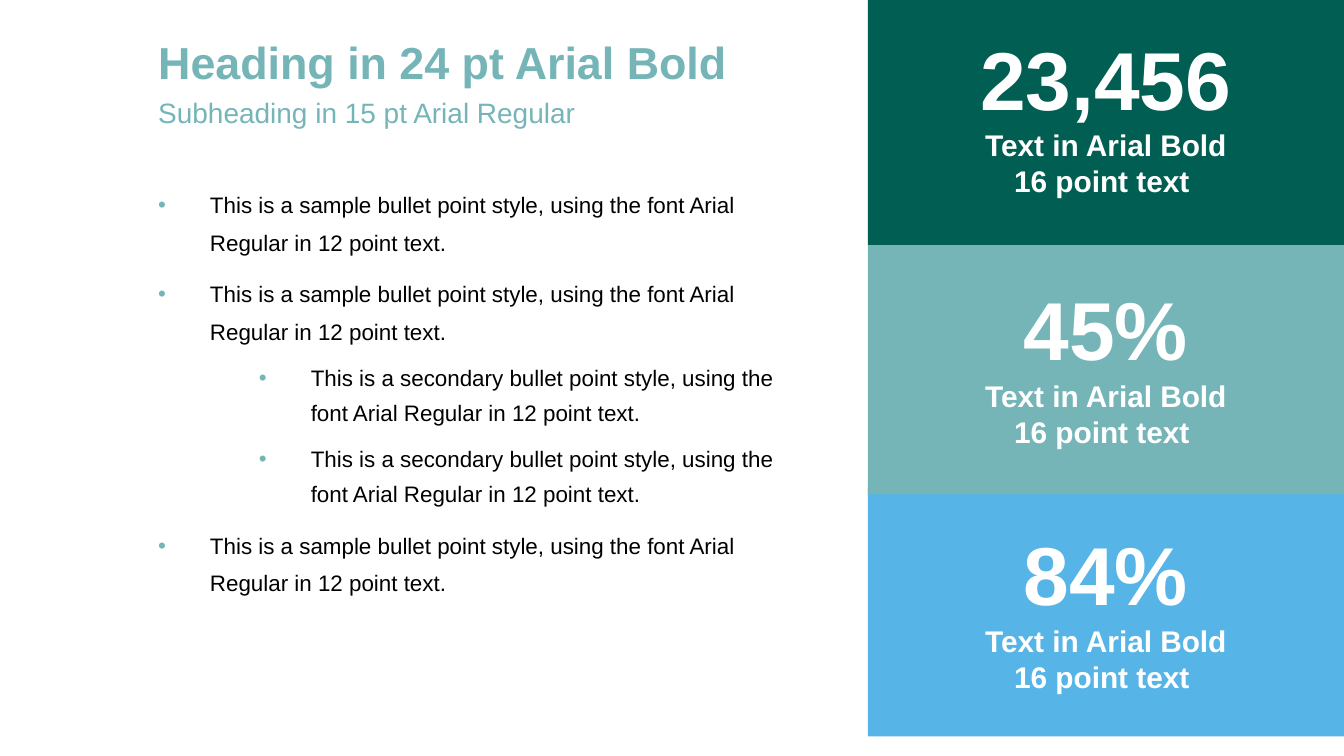
from lxml.etree import SubElement
from pptx import Presentation
from pptx.dml.color import RGBColor
from pptx.enum.shapes import MSO_SHAPE
from pptx.enum.text import MSO_ANCHOR, MSO_AUTO_SIZE, PP_ALIGN
from pptx.oxml.ns import qn
from pptx.util import Pt

PX = 9525
COLORS = {"green": "005E52", "teal": "75B5B8", "blue": "56B4E6",
          "black": "000000", "white": "FFFFFF"}
FIRST = "This is a sample bullet point style, using the font Arial Regular in 12 point text."
SECOND = "This is a secondary bullet point style, using the font Arial Regular in 12 point text."
BULLETS = [(FIRST, 0), (FIRST, 0), (SECOND, 4), (SECOND, 4), (FIRST, 0)]
CAPTION = ["Text in Arial Bold", "16 point text "]
PANELS = [("84%", "blue", 348, 26), ("45%", "teal", 175, 24), ("23,456", "green", -3, 23)]


def px(*values):
    return [v * PX for v in values]


def rgb(name):
    return RGBColor.from_string(COLORS[name])


def prepare(tf, inset=True):
    tf.word_wrap = True
    tf.auto_size = MSO_AUTO_SIZE.NONE
    tf.vertical_anchor = MSO_ANCHOR.TOP
    if not inset:
        tf.margin_left = tf.margin_right = tf.margin_top = tf.margin_bottom = 0
    return tf


def add_run(p, text, size, color, bold=False):
    r = p.add_run()
    r.text = text
    r.font.name = "Arial"
    r.font.size = Pt(size)
    r.font.bold = bold
    r.font.color.rgb = rgb(color)


def add_bullet(p, left, hanging, tab=None):
    pPr = p._p.get_or_add_pPr()
    pPr.set("marL", str(left * PX))
    pPr.set("indent", str(-hanging * PX))
    SubElement(SubElement(pPr, qn("a:buClr")), qn("a:srgbClr"), val=COLORS["teal"])
    SubElement(pPr, qn("a:buFont"), typeface="Arial")
    SubElement(pPr, qn("a:buChar"), char="•")
    if tab:
        tabs = SubElement(pPr, qn("a:tabLst"))
        SubElement(tabs, qn("a:tab"), pos=str(tab * PX), algn="l")


def heading(s, x, y, w, h):
    title = s.shapes.title
    title.left, title.top, title.width, title.height = px(x, y, w, h)
    tf = prepare(title.text_frame, inset=False)
    lines = [("Heading in 24 pt Arial Bold", 24, True, 0.9),
             ("Subheading in 15 pt Arial Regular", 15, False, 1.2)]
    for i, (text, size, bold, spacing) in enumerate(lines):
        p = tf.add_paragraph() if i else tf.paragraphs[0]
        p.alignment = PP_ALIGN.LEFT
        p.line_spacing = spacing
        add_run(p, text, size, "teal", bold)


def bullet_list(s, x, y, w, h):
    tf = prepare(s.shapes.add_textbox(*px(x, y, w, h)).text_frame, inset=False)
    for i, (text, level) in enumerate(BULLETS):
        p = tf.add_paragraph() if i else tf.paragraphs[0]
        p.level = level
        p.line_spacing = 1.3 if level else 1.4
        if i:
            p.space_before = Pt(6 if level else 7.5)
        if level:
            add_bullet(p, 109, 37, tab=75)
        else:
            add_bullet(p, 37, 37)
        add_run(p, text, 12, "black")


def stat_panel(s, x, y, w, h, number, color, offset):
    sp = s.shapes.add_shape(MSO_SHAPE.RECTANGLE, *px(x, y, w, h))
    sp.shadow.inherit = False
    sp.fill.solid()
    sp.fill.fore_color.rgb = rgb(color)
    sp.line.fill.background()

    number_box = s.shapes.add_textbox(*px(x, y + offset, w, 71))
    p = prepare(number_box.text_frame, inset=False).paragraphs[0]
    p.alignment = PP_ALIGN.CENTER
    add_run(p, number, 44, "white", bold=True)

    caption_box = s.shapes.add_textbox(*px(x, y + offset + 66, w, 61))
    p = prepare(caption_box.text_frame).paragraphs[0]
    p.alignment = PP_ALIGN.CENTER
    for i, line in enumerate(CAPTION):
        if i:
            p.add_line_break()
        add_run(p, line, 16, "white", bold=True)


def main():
    prs = Presentation()
    prs.slide_width, prs.slide_height = px(960, 540)
    s = prs.slides.add_slide(prs.slide_layouts[5])
    heading(s, 113, 29, 462, 85)
    bullet_list(s, 113, 129, 445, 215)
    for number, color, top, offset in PANELS:
        stat_panel(s, 620, top, 340, 178, number, color, offset)
    prs.save("out.pptx")


if __name__ == "__main__":
    main()
